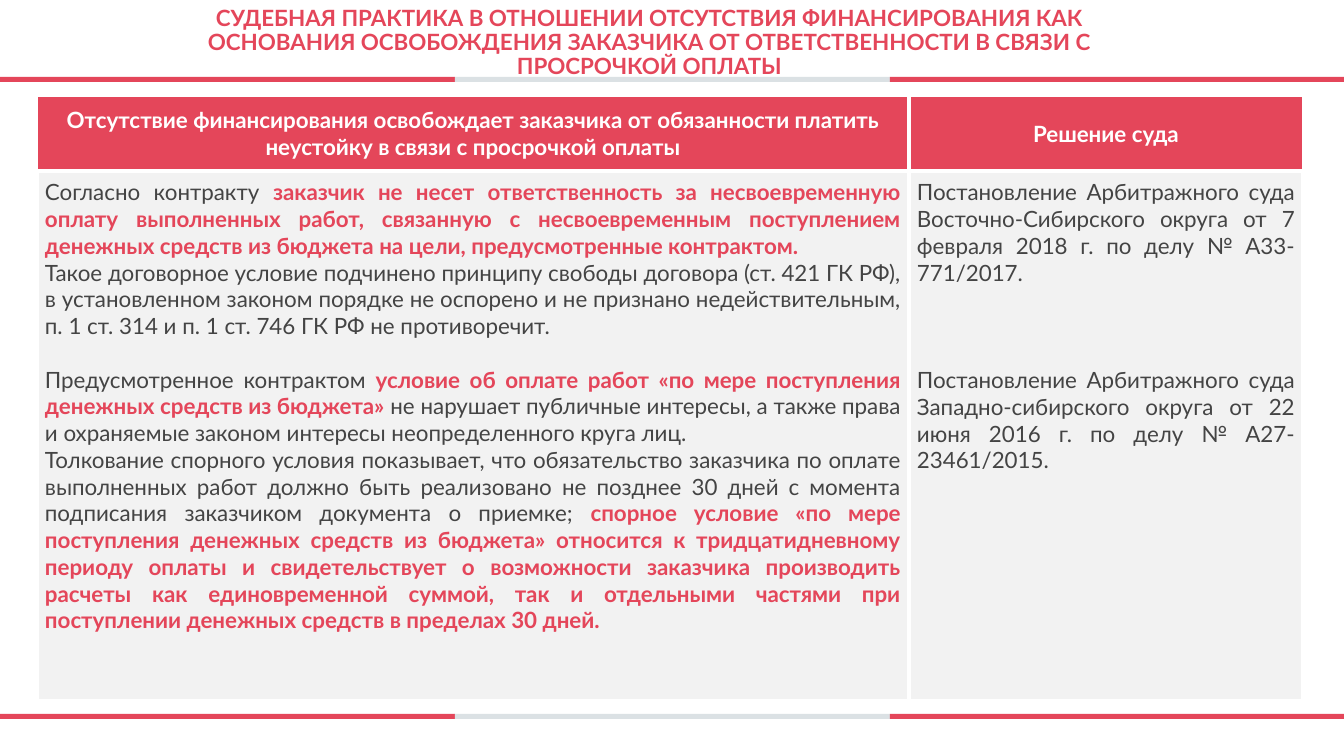
"""Builds a slide with a two-column table of court practice on late payment."""
from lxml.etree import SubElement as Sub
from pptx import Presentation
from pptx.dml.color import RGBColor as RGB
from pptx.enum.shapes import MSO_SHAPE as Shape
from pptx.enum.text import MSO_ANCHOR as Anchor, MSO_AUTO_SIZE as Auto, PP_ALIGN as Align
from pptx.oxml.ns import qn
from pptx.util import Emu, Pt

PX = 914400 / 100.8
INK = {"red": "E4465A", "gray": "DBE1E4", "pale": "F2F2F2", "text": "444444", "white": "FFFFFF"}


def px(*nums):
    return [Emu(round(n * PX)) for n in nums]


def write(par, runs, align, gap=0):
    par.alignment = align
    if gap:
        par.space_before = Pt(gap)
    for text, ink, bold in runs:
        run = par.add_run()
        run.text = text
        for key, val in {"name": "Lato", "size": Pt(16), "bold": bold}.items():
            setattr(run.font, key, val)
        run.font.color.rgb = RGB.from_string(INK[ink])


deck = Presentation()
deck.slide_width, deck.slide_height = px(1344, 756)
slide = deck.slides.add_slide(deck.slide_layouts[5])

stops = [0, 455, 890, 1344]
for top in (77, 714):
    for left, right, ink in zip(stops, stops[1:], ("red", "gray", "red")):
        bar = slide.shapes.add_shape(Shape.RECTANGLE, *px(left, top, right - left, 5))
        bar.shadow.inherit = False
        bar.fill.solid()
        bar.fill.fore_color.rgb = RGB.from_string(INK[ink])
        bar.line.fill.background()

title = slide.shapes.title
title.left, title.top, title.width, title.height = px(163, 5, 973, 76)
frame = title.text_frame
for key, val in {"word_wrap": True, "auto_size": Auto.NONE, "vertical_anchor": Anchor.MIDDLE}.items():
    setattr(frame, key, val)
head = frame.paragraphs[0]
head.line_spacing = 0.9
write(head, [("СУДЕБНАЯ ПРАКТИКА В ОТНОШЕНИИ ОТСУТСТВИЯ ФИНАНСИРОВАНИЯ КАК ОСНОВАНИЯ "
              "ОСВОБОЖДЕНИЯ ЗАКАЗЧИКА ОТ ОТВЕТСТВЕННОСТИ В СВЯЗИ С ПРОСРОЧКОЙ ОПЛАТЫ",
              "red", True)], Align.CENTER)

heads = ["Отсутствие финансирования освобождает заказчика от обязанности платить "
         "неустойку в связи с просрочкой оплаты", "Решение суда"]
cases = [
    (0, [("Согласно контракту ", "text", False),
         ("заказчик не несет ответственность за несвоевременную оплату выполненных работ, "
          "связанную с несвоевременным поступлением денежных средств из бюджета на цели, "
          "предусмотренные контрактом.", "red", True)]),
    (0, [("Такое договорное условие подчинено принципу свободы договора (ст. 421 ГК РФ), "
          "в установленном законом порядке не оспорено и не признано недействительным, "
          "п. 1 ст. 314 и п. 1 ст. 746 ГК РФ не противоречит.", "text", False)]),
    (19, [("Предусмотренное контрактом ", "text", False),
          ("условие об оплате работ «по мере поступления денежных средств из бюджета» ", "red", True),
          ("не нарушает публичные интересы, а также права и охраняемые законом интересы "
           "неопределенного круга лиц.", "text", False)]),
    (0, [("Толкование спорного условия показывает, что обязательство заказчика по оплате "
          "выполненных работ должно быть реализовано не позднее 30 дней с момента подписания "
          "заказчиком документа о приемке; ", "text", False),
         ("спорное условие «по мере поступления денежных средств из бюджета» относится к "
          "тридцатидневному периоду оплаты и свидетельствует о возможности заказчика производить "
          "расчеты как единовременной суммой, так и отдельными частями при поступлении денежных "
          "средств в пределах 30 дней.", "red", True)]),
]
courts = [
    (0, [("Постановление Арбитражного суда Восточно-Сибирского округа от 7 февраля 2018 г. "
          "по делу № А33-771/2017.", "text", False)]),
    (57.6, [("Постановление Арбитражного суда Западно-сибирского округа от 22 июня 2016 г. "
             "по делу № А27-23461/2015.", "text", False)]),
]
rows = [[[(0, [(text, "white", True)])] for text in heads], [cases, courts]]
looks = [("red", Align.CENTER, Anchor.MIDDLE, 0), ("pale", Align.JUSTIFY, Anchor.TOP, 8)]

table = slide.shapes.add_table(2, 2, *px(37, 96, 1266, 605)).table
table.columns[0].width, table.columns[1].width = px(872, 394)
table.rows[0].height, table.rows[1].height = px(75, 530)
for r, (row, (fill, align, anchor, pad)) in enumerate(zip(rows, looks)):
    for c, pars in enumerate(row):
        cell = table.cell(r, c)
        cell.vertical_anchor = anchor
        cell.margin_left, cell.margin_right, cell.margin_top, cell.margin_bottom = px(8, 8, pad, pad)
        outer = "LT" if c == 0 else "RT"
        for side in "LRTB":
            wide = 1 if r == 0 and side in outer else 3
            edge = Sub(cell._tc.get_or_add_tcPr(), qn("a:ln" + side), w=str(Pt(wide)))
            Sub(Sub(edge, qn("a:solidFill")), qn("a:srgbClr"), val=INK["white"])
        cell.fill.solid()
        cell.fill.fore_color.rgb = RGB.from_string(INK[fill])
        body = cell.text_frame
        for i, (gap, runs) in enumerate(pars):
            write(body.add_paragraph() if i else body.paragraphs[0], runs, align, gap)

deck.save("out.pptx")
